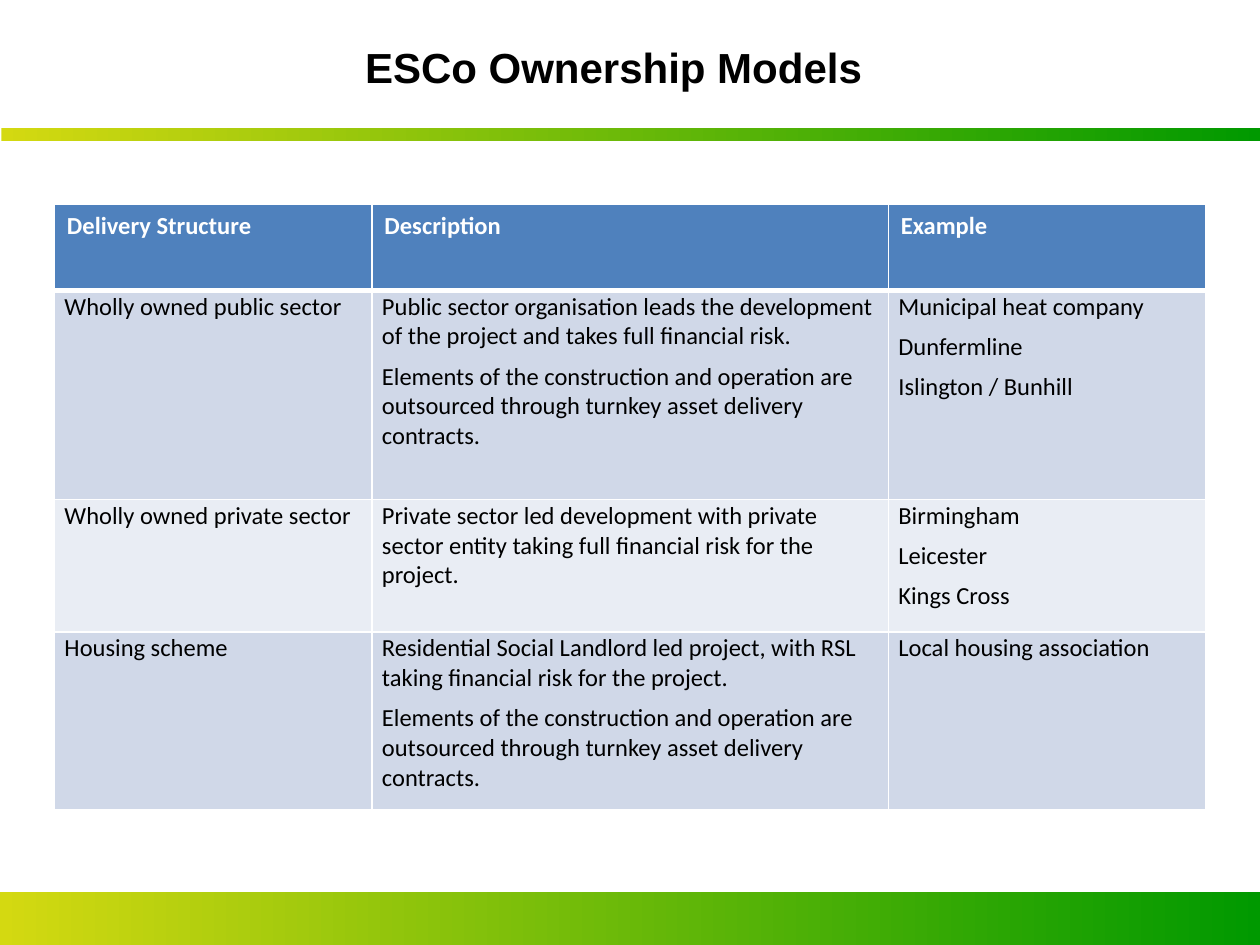
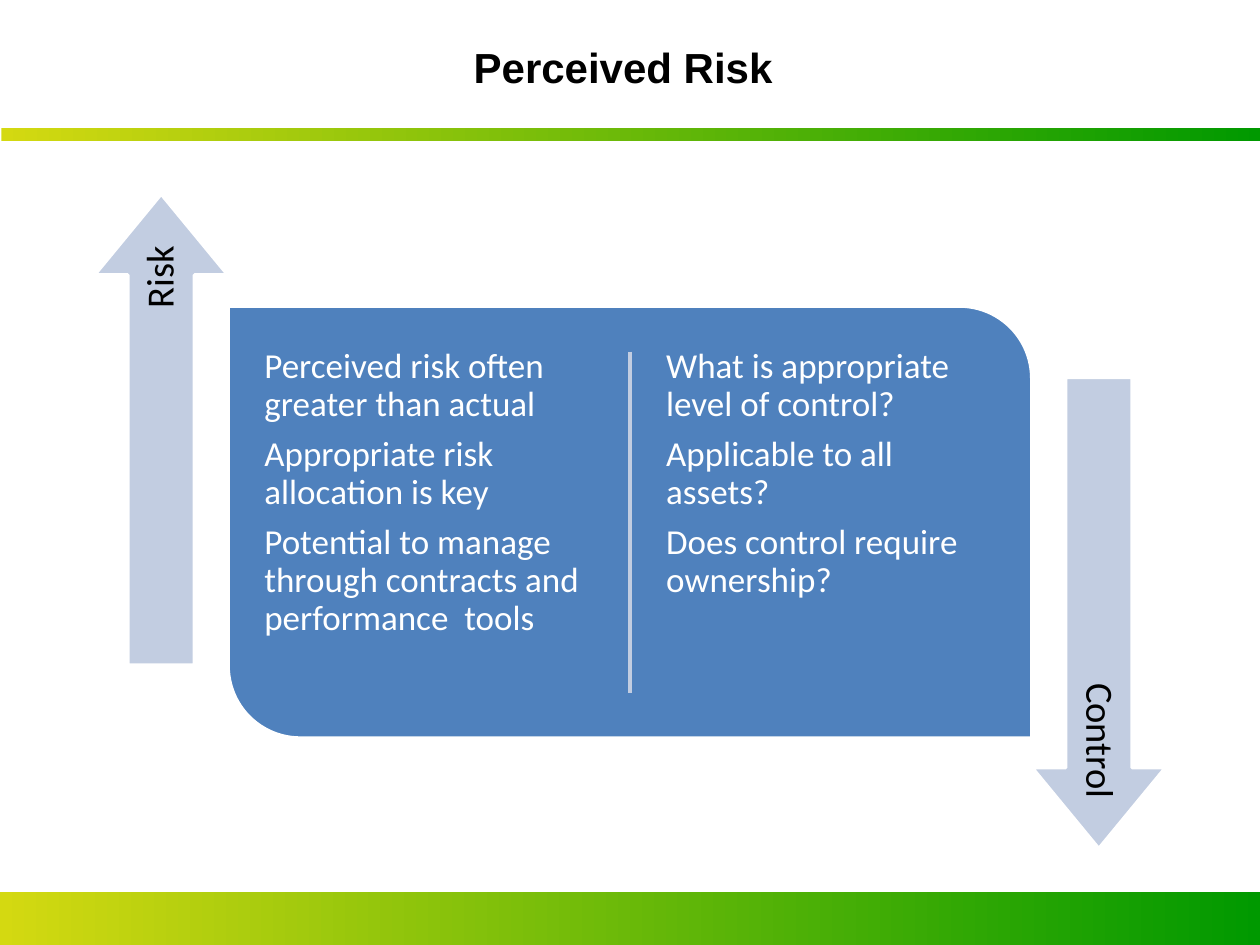
from lxml.etree import SubElement
from pptx import Presentation
from pptx.dml.color import RGBColor
from pptx.enum.shapes import MSO_CONNECTOR as Connector, MSO_SHAPE as Shape
from pptx.enum.text import MSO_ANCHOR as Anchor, MSO_AUTO_SIZE as AutoSize, PP_ALIGN as Align
from pptx.oxml import parse_xml
from pptx.oxml.ns import nsdecls, qn
from pptx.util import Cm, Pt

COLORS = {
    "black": "000000",
    "white": "FFFFFF",
    "lime": "D4D911",
    "green": "009900",
    "blue": "4F81BD",
    "pale_blue": "C2CDE1",
    "row_dark": "D0D8E8",
    "row_light": "E9EDF4",
}
SLIDE_WIDTH, SLIDE_HEIGHT = 25.4, 19.05
CENTER = SLIDE_WIDTH / 2

OWNERSHIP_COLUMNS = [6.4, 10.41, 6.4]
OWNERSHIP_HEIGHTS = [1.73, 4.22, 2.67, 3.58]
OUTSOURCED = ("Elements of the construction and operation are outsourced "
              "through turnkey asset delivery contracts.")
OWNERSHIP_ROWS = [
    [["Delivery Structure"], ["Description"], ["Example"]],
    [["Wholly owned public sector"],
     ["Public sector organisation leads the development of the project "
      "and takes full financial risk.", OUTSOURCED],
     ["Municipal heat company", "Dunfermline", "Islington / Bunhill"]],
    [["Wholly owned private sector"],
     ["Private sector led development with private sector entity taking "
      "full financial risk for the project."],
     ["Birmingham", "Leicester", "Kings Cross"]],
    [["Housing scheme"],
     ["Residential Social Landlord led project, with RSL taking financial "
      "risk for the project.", OUTSOURCED],
     ["Local housing association"]],
]
RISK_POINTS = [
    "Perceived risk often greater than actual",
    "Appropriate risk allocation is key",
    "Potential to manage through contracts and performance  tools",
]
CONTROL_POINTS = [
    "What is appropriate level of control?",
    "Applicable to all assets?",
    "Does control require ownership?",
]


def color(name):
    return RGBColor.from_string(COLORS[name])


def write_text(frame, paragraphs, size, font="Calibri", ink="black", bold=False,
               align=Align.LEFT, before=0, after=0, line_spacing=None):
    for index, text in enumerate(paragraphs):
        paragraph = frame.paragraphs[0] if index == 0 else frame.add_paragraph()
        paragraph.alignment = align
        paragraph.space_before = Pt(before if index else 0)
        paragraph.space_after = Pt(after)
        paragraph.line_spacing = line_spacing
        run = paragraph.add_run()
        run.text = text
        run.font.name = font
        run.font.size = Pt(size)
        run.font.bold = bold
        run.font.color.rgb = color(ink)


def set_margins(target, left, top, right, bottom):
    target.margin_left, target.margin_top = Cm(left), Cm(top)
    target.margin_right, target.margin_bottom = Cm(right), Cm(bottom)


def add_text_box(slide, box, paragraphs, margin=None, wrap=True, anchor=Anchor.TOP, **text_format):
    text_box = slide.shapes.add_textbox(*map(Cm, box))
    frame = text_box.text_frame
    frame.word_wrap = wrap
    frame.vertical_anchor = anchor
    if margin is not None:
        set_margins(frame, *[margin] * 4)
    write_text(frame, paragraphs, **text_format)
    return text_box


def add_gradient_band(slide, box):
    band = slide.shapes.add_shape(Shape.RECTANGLE, *map(Cm, box))
    band.shadow.inherit = False
    band.line.fill.background()
    band.fill.gradient()
    band.fill.gradient_angle = 0
    for stop, name in zip(band.fill.gradient_stops, ("lime", "green")):
        stop.color.rgb = color(name)


def add_outlined_shape(slide, kind, box, fill, adjustments):
    shape = slide.shapes.add_shape(kind, *map(Cm, box))
    shape.shadow.inherit = False
    shape.fill.solid()
    shape.fill.fore_color.rgb = color(fill)
    shape.line.color.rgb = color("white")
    shape.line.width = Pt(2)
    for index, value in enumerate(adjustments):
        shape.adjustments[index] = value
    return shape


def add_divider(slide, x, top, bottom):
    line = slide.shapes.add_connector(Connector.STRAIGHT, Cm(x), Cm(top), Cm(x), Cm(bottom))
    line.line.color.rgb = color("pale_blue")
    line.line.width = Pt(2)
    SubElement(line._element.spPr, qn("a:effectLst"))


def add_titled_slide(presentation, title, left, width):
    slide = presentation.slides.add_slide(presentation.slide_layouts[6])
    add_gradient_band(slide, (0, 17.98, SLIDE_WIDTH, 1.07))
    add_gradient_band(slide, (0.03, 2.59, SLIDE_WIDTH, 0.25))
    title_box = add_text_box(slide, (left, 0.71, width, 1.27), [title], wrap=False,
                             size=24, font="Arial", bold=True)
    title_box.text_frame.auto_size = AutoSize.SHAPE_TO_FIT_TEXT
    return slide


def set_borders(cell, top=1, bottom=1):
    properties = cell._tc.get_or_add_tcPr()
    widths = {"lnL": 1, "lnR": 1, "lnT": top, "lnB": bottom}
    for index, (side, width) in enumerate(widths.items()):
        properties.insert(index, parse_xml(
            f'<a:{side} {nsdecls("a")} w="{Pt(width)}"><a:solidFill>'
            f'<a:srgbClr val="{COLORS["white"]}"/></a:solidFill></a:{side}>'))


def add_ownership_table(slide):
    frame = slide.shapes.add_table(
        len(OWNERSHIP_ROWS), len(OWNERSHIP_COLUMNS), Cm(1.1), Cm(4.12),
        Cm(sum(OWNERSHIP_COLUMNS)), Cm(sum(OWNERSHIP_HEIGHTS)))
    table = frame.table
    for column, width in zip(table.columns, OWNERSHIP_COLUMNS):
        column.width = Cm(width)
    for row_index, (row, height) in enumerate(zip(table.rows, OWNERSHIP_HEIGHTS)):
        row.height = Cm(height)
        header = row_index == 0
        fill = "blue" if header else ("row_light", "row_dark")[row_index % 2]
        for cell, paragraphs in zip(row.cells, OWNERSHIP_ROWS[row_index]):
            cell.fill.solid()
            cell.fill.fore_color.rgb = color(fill)
            set_margins(cell, *((0.25, 0.13, 0.25, 0.13) if header else (0.2, 0.03, 0.2, 0)))
            set_borders(cell, top=3 if row_index == 1 else 1, bottom=3 if header else 1)
            write_text(cell.text_frame, paragraphs, size=14, bold=header,
                       ink="white" if header else "black", before=3, after=3)


def add_labelled_arrow(slide, label, center_x, arrow_y, label_y, rotation):
    def centered(width, height, center_y):
        return center_x - width / 2, center_y - height / 2, width, height

    arrow = add_outlined_shape(slide, Shape.RIGHT_ARROW, centered(9.5, 2.69, arrow_y),
                               "pale_blue", (0.498, 0.607))
    text_box = add_text_box(slide, centered(8.69, 1.35, label_y), [label], margin=0.23,
                            anchor=Anchor.MIDDLE, size=22, align=Align.RIGHT, line_spacing=0.9)
    arrow.rotation = text_box.rotation = rotation


def build_ownership_slide(presentation):
    slide = add_titled_slide(presentation, "ESCo Ownership Models", 7.11, 10.52)
    add_ownership_table(slide)


def build_risk_slide(presentation):
    slide = add_titled_slide(presentation, "Perceived Risk", 9.3, 6.53)

    # Central panel with two columns
    add_outlined_shape(slide, Shape.ROUND_2_DIAG_RECTANGLE, (4.6, 6.17, 16.2, 8.71),
                       "blue", (0, 0.167))
    add_divider(slide, CENTER, 7.09, 13.97)
    for left, points in ((5.13, RISK_POINTS), (13.23, CONTROL_POINTS)):
        add_text_box(slide, (left, 6.83, 7.01, 7.39), points, margin=0.2,
                     size=20, ink="white", after=7, line_spacing=0.9)

    # Opposing arrows, mirrored about the slide centre
    add_labelled_arrow(slide, "Risk", CENTER - 9.45, 8.66, 9.08, 270)
    add_labelled_arrow(slide, "Control", CENTER + 9.45, 12.36, 11.98, 90)


def main():
    presentation = Presentation()
    presentation.slide_width = Cm(SLIDE_WIDTH)
    presentation.slide_height = Cm(SLIDE_HEIGHT)
    build_ownership_slide(presentation)
    build_risk_slide(presentation)
    presentation.save("out.pptx")


if __name__ == "__main__":
    main()
